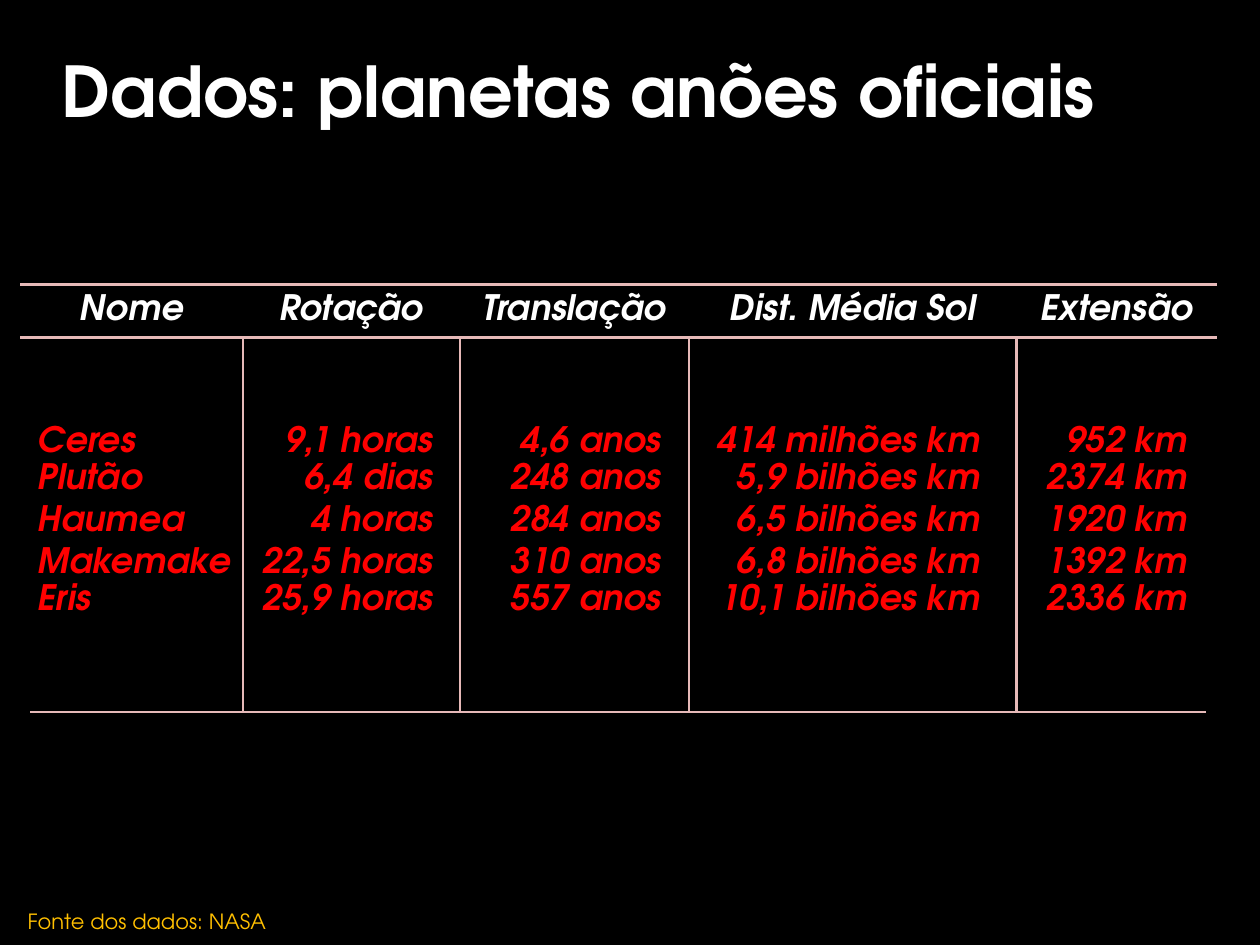
from pptx import Presentation
from pptx.dml.color import RGBColor
from pptx.enum.shapes import MSO_CONNECTOR
from pptx.enum.text import MSO_ANCHOR, MSO_AUTO_SIZE, PP_ALIGN
from pptx.oxml.ns import qn
from pptx.util import Inches, Pt
from lxml import etree

LEFT, CENTER, RIGHT = PP_ALIGN.LEFT, PP_ALIGN.CENTER, PP_ALIGN.RIGHT
TOP, MIDDLE, BOTTOM = MSO_ANCHOR.TOP, MSO_ANCHOR.MIDDLE, MSO_ANCHOR.BOTTOM
STRAIGHT = MSO_CONNECTOR.STRAIGHT
NO_STYLE_NO_GRID = "{2D5ABB26-0587-4C30-8999-92F81FD0307C}"
FONT = "TeX Gyre Adventor"
COLORS = {"background": "000000", "title": "FFFFFF", "header": "FFFFFF",
          "data": "FF0000", "rule": "E6B9B8", "source": "FFC000"}


def format_text(frame, size, color, align, bold=False, italic=False):
    for paragraph in frame.paragraphs:
        paragraph.alignment = align
        for span in paragraph.runs:
            span.font.name = FONT
            span.font.size = Pt(size)
            span.font.bold = bold
            span.font.italic = italic
            span.font.color.rgb = RGBColor.from_string(COLORS[color])


def add_rule(x1, y1, x2, y2):
    rule = page.shapes.add_connector(
        STRAIGHT, Inches(x1), Inches(y1), Inches(x2), Inches(y2))
    rule.line.color.rgb = RGBColor.from_string(COLORS["rule"])
    rule.line.width = Pt(1.5)
    etree.SubElement(rule._element.spPr, qn("a:effectLst"))


deck = Presentation()
deck.slide_width, deck.slide_height = Inches(10), Inches(7.5)
page = deck.slides.add_slide(deck.slide_layouts[5])
page.background.fill.solid()
page.background.fill.fore_color.rgb = RGBColor.from_string(COLORS["background"])

# Title
title = page.shapes.title
title.left, title.top = Inches(0.09), Inches(0.32)
title.width, title.height = Inches(9), Inches(0.78)
title.text_frame.text = "Dados: planetas anões oficiais"
title.text_frame.auto_size = MSO_AUTO_SIZE.NONE
title.text_frame.vertical_anchor = MIDDLE
format_text(title.text_frame, 40, "title", CENTER, bold=True)

# Table of dwarf planets
rows = [
    ["Nome", "Rotação", "Translação", "Dist. Média Sol", "Extensão"],
    ["Ceres", "9,1 horas", "4,6 anos", "414 milhões km", "952 km"],
    ["Plutão", "6,4 dias", "248 anos", "5,9 bilhões km", "2374 km"],
    ["Haumea", "4 horas", "284 anos", "6,5 bilhões km", "1920 km"],
    ["Makemake", "22,5 horas", "310 anos", "6,8 bilhões km", "1392 km"],
    ["Eris", "25,9 horas", "557 anos", "10,1 bilhões km", "2336 km"],
]
column_edges = [0.16, 1.93, 3.65, 5.47, 8.07, 9.66]
header_top, header_bottom, table_bottom = 2.26, 2.68, 5.65
line_height = 1 / 3
first_row_height = 0.96
last_row_height = (table_bottom - header_bottom - first_row_height
                   - 3 * line_height)
row_heights = [header_bottom - header_top, first_row_height,
               *[line_height] * 3, last_row_height]
row_anchors = [MIDDLE, BOTTOM, MIDDLE, MIDDLE, MIDDLE, TOP]
right_margins = [0, 0.21, 0.22, 0.29, 0.23]

table = page.shapes.add_table(
    len(rows), len(rows[0]), Inches(column_edges[0]), Inches(header_top),
    Inches(column_edges[-1] - column_edges[0]),
    Inches(table_bottom - header_top)).table
table.first_row = table.horz_banding = False
table._tbl.tblPr.find(qn("a:tableStyleId")).text = NO_STYLE_NO_GRID
for column, start, end in zip(table.columns, column_edges, column_edges[1:]):
    column.width = Inches(end - start)
for row, height in zip(table.rows, row_heights):
    row.height = Inches(height)

for r, values in enumerate(rows):
    for c, value in enumerate(values):
        cell = table.cell(r, c)
        cell.fill.background()
        cell.vertical_anchor = row_anchors[r]
        cell.margin_left = cell.margin_right = 0
        cell.margin_top = cell.margin_bottom = 0
        cell.text_frame.text = value
        if r == 0:
            color, align = "header", CENTER
        elif c == 0:
            color, align = "data", LEFT
            cell.margin_left = Inches(0.14)
        else:
            color, align = "data", RIGHT
            cell.margin_right = Inches(right_margins[c])
        format_text(cell.text_frame, 20, color, align, bold=True, italic=True)

# Rules around the header, between the columns and below the data
for y in (header_top, header_bottom):
    add_rule(column_edges[0], y, column_edges[-1], y)
for x in column_edges[1:-1]:
    add_rule(x, header_bottom, x, table_bottom)
add_rule(0.24, table_bottom, 9.57, table_bottom)

# Data source
source = page.shapes.add_textbox(
    Inches(0.12), Inches(7.16), Inches(7.15), Inches(0.3))
source.text_frame.word_wrap = True
source.text_frame.text = "Fonte dos dados: NASA"
format_text(source.text_frame, 12, "source", LEFT)

deck.save("out.pptx")
